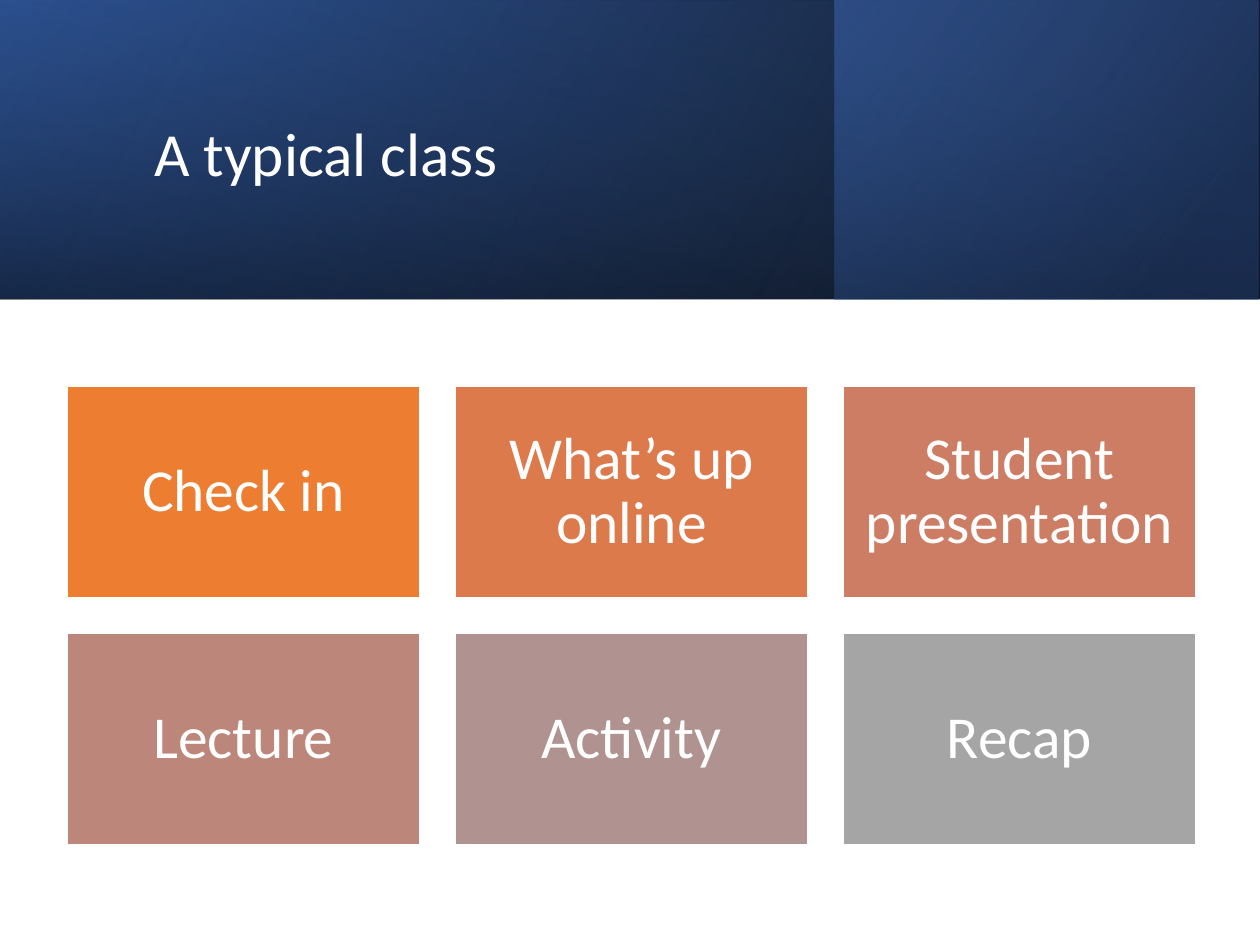
from lxml.etree import SubElement
from pptx import Presentation
from pptx.dml.color import RGBColor
from pptx.enum.shapes import MSO_SHAPE
from pptx.enum.text import MSO_ANCHOR, PP_ALIGN
from pptx.oxml.ns import qn
from pptx.util import Pt

PX = 914400 // 126

WHITE = RGBColor(0xFF, 0xFF, 0xFF)
BLACK = RGBColor(0x00, 0x00, 0x00)
NAVY = RGBColor(0x20, 0x38, 0x64)
DEEP = RGBColor(0x2F, 0x55, 0x97)
BLUE = RGBColor(0x44, 0x72, 0xC4)
ORANGE = RGBColor(0xED, 0x7D, 0x31)
COPPER = RGBColor(0xDC, 0x7A, 0x4B)
CORAL = RGBColor(0xCC, 0x7D, 0x64)
ROSE = RGBColor(0xBD, 0x86, 0x7B)
MAUVE = RGBColor(0xB0, 0x93, 0x91)
GRAY = RGBColor(0xA5, 0xA5, 0xA5)

BANDS = [
    ((0, 0, 1260, 299), 0, 330, [(0, BLACK, 96), (100, DEEP, 100)]),
    ((835, 0, 424, 299), 0, 320, [(19, NAVY, 68), (100, BLUE, 48)]),
    ((480, -480, 299, 1260), 270, 350, [(23, DEEP, 16), (99, BLACK, 45)]),
]
CARDS = [
    ("Check in", ORANGE),
    ("What’s up online", COPPER),
    ("Student presentation", CORAL),
    ("Lecture", ROSE),
    ("Activity", MAUVE),
    ("Recap", GRAY),
]
COLS = 3
LEFT, TOP = 67, 386
WIDTH, HEIGHT = 353, 212
GAP = 35
INSET = 18


def scale(box):
    return [n * PX for n in box]


def apply(item, values):
    for name, value in values.items():
        setattr(item, name, value)


def add_rect(slide, box):
    rect = slide.shapes.add_shape(MSO_SHAPE.RECTANGLE, *scale(box))
    rect.shadow.inherit = False
    return rect


def add_band(slide, box, turn, angle, stops):
    band = add_rect(slide, box)
    band.rotation = turn
    band.line.fill.background()
    band.element.spPr.find(qn("a:xfrm")).set("flipH", "1")
    band.fill.gradient()
    band.fill.gradient_angle = 360 - angle
    for stop, (place, color, _) in zip(band.fill.gradient_stops, stops):
        stop.position = place / 100
        stop.color.rgb = color
    tints = band.element.spPr.iter(qn("a:srgbClr"))
    for tint, (_, _, alpha) in zip(list(tints), stops):
        SubElement(tint, qn("a:alpha")).set("val", str(alpha * 1000))


def set_text(shape, text, size, align, frame):
    apply(shape.text_frame, {
        "text": text,
        "word_wrap": True,
        "vertical_anchor": MSO_ANCHOR.MIDDLE,
        **frame,
    })
    para = shape.text_frame.paragraphs[0]
    apply(para, {"alignment": align, "line_spacing": 0.9})
    apply(para.runs[0].font, {"name": "Calibri", "size": Pt(size)})
    para.runs[0].font.color.rgb = WHITE


def add_title(slide, text):
    title = slide.shapes.add_textbox(*scale((142, 48, 1004, 217)))
    set_text(title, text, 35, PP_ALIGN.LEFT, {})


def add_card(slide, index, text, color):
    row, col = divmod(index, COLS)
    left = LEFT + col * (WIDTH + GAP)
    top = TOP + row * (HEIGHT + GAP)
    card = add_rect(slide, (left, top, WIDTH, HEIGHT))
    card.fill.solid()
    card.fill.fore_color.rgb = color
    card.line.color.rgb = WHITE
    card.line.width = Pt(1)
    sides = ("left", "top", "right", "bottom")
    frame = {f"margin_{side}": INSET * PX for side in sides}
    set_text(card, text, 34, PP_ALIGN.CENTER, frame)


def main():
    deck = Presentation()
    apply(deck, {"slide_width": 1260 * PX, "slide_height": 945 * PX})
    slide = deck.slides.add_slide(deck.slide_layouts[6])
    for band in BANDS:
        add_band(slide, *band)
    add_title(slide, "A typical class")
    for index, (text, color) in enumerate(CARDS):
        add_card(slide, index, text, color)
    deck.save("out.pptx")


if __name__ == "__main__":
    main()
